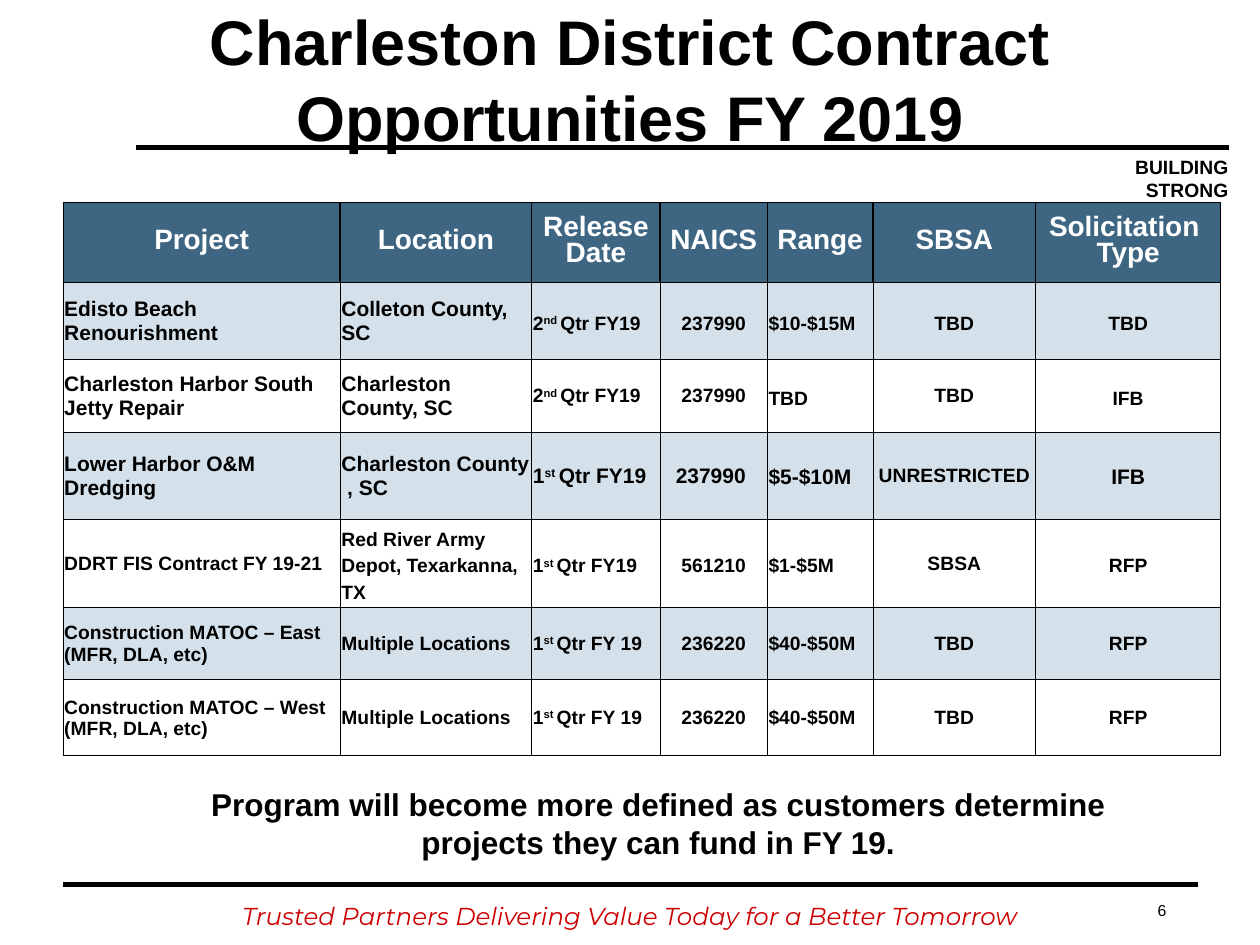
from dataclasses import dataclass
from typing import Optional

from lxml.etree import SubElement
from pptx import Presentation
from pptx.dml.color import RGBColor
from pptx.enum.shapes import MSO_CONNECTOR
from pptx.enum.text import MSO_ANCHOR, MSO_AUTO_SIZE, PP_ALIGN
from pptx.oxml.ns import qn
from pptx.util import Emu, Pt

EMU_PER_PX = 9144  # 100 px to the inch


@dataclass(frozen=True)
class Theme:
    font: str = "Arial"
    motto_font: str = "Montserrat"
    black: str = "000000"
    white: str = "FFFFFF"
    motto: str = "CC0000"
    header: str = "3E6682"
    band: str = "D4E1EA"
    title_size: int = 36
    note_size: int = 18
    header_size: int = 16
    motto_size: int = 14
    large_size: int = 12
    small_size: int = 11
    number_size: int = 9
    rule_width: float = 3
    cell_line: float = 0.5
    header_line: float = 1
    row_leading: int = 15
    motto_leading: int = 16


THEME = Theme()
LEFT, CENTER, RIGHT = PP_ALIGN.LEFT, PP_ALIGN.CENTER, PP_ALIGN.RIGHT


@dataclass(frozen=True)
class Style:
    size: int
    color: str = THEME.black
    align: PP_ALIGN = LEFT
    leading: Optional[int] = None
    font: str = THEME.font
    bold: bool = True
    italic: bool = False


@dataclass(frozen=True)
class Label:
    text: str
    left: int
    top: int
    width: int
    height: int
    style: Style
    margin: int = 10
    title: bool = False


@dataclass(frozen=True)
class Rule:
    start: int
    end: int
    y: int


@dataclass(frozen=True)
class ProjectRow:
    """Carets enclose superscript; spaced lists columns with fixed leading."""
    height: int
    texts: tuple[str, ...]
    large: tuple[int, ...] = ()
    spaced: tuple[int, ...] = ()


RULES = [Rule(975, 108, 117), Rule(951, 50, 702)]
LABELS = [
    Label("BUILDING STRONG", 832, 123, 143, 19,
          Style(THEME.small_size, align=RIGHT), margin=0),
    Label("Trusted Partners Delivering Value Today for a Better Tomorrow", 0, 716, 1000, 22,
          Style(THEME.motto_size, THEME.motto, CENTER, THEME.motto_leading,
                THEME.motto_font, bold=False, italic=True), margin=0),
    Label("6", 909, 710, 40, 25, Style(THEME.number_size, bold=False)),
    Label("Program will become more defined as customers determine projects "
          "they can fund in FY 19.", 125, 618, 795, 71,
          Style(THEME.note_size, align=CENTER)),
    Label("Charleston District Contract Opportunities FY 2019", 50, 33, 900, 58,
          Style(THEME.title_size, align=CENTER), title=True),
]

TABLE_LEFT, TABLE_TOP = 50, 161
COLUMN_WIDTHS = (220, 152, 102, 85, 84, 129, 147)
COLUMN_ALIGNS = (LEFT, LEFT, LEFT, CENTER, LEFT, CENTER, CENTER)
HEADER_HEIGHT = 63
HEADERS = ("Project", "Location", "Release\nDate", "NAICS", "Range", "SBSA",
           "Solicitation \nType")
ROWS = [
    ProjectRow(61, ("Edisto Beach Renourishment", "Colleton County, SC", "2^nd ^Qtr FY19",
                    "237990", "$10-$15M", "TBD", "TBD"), (0, 1), (2, 3, 4, 5, 6)),
    ProjectRow(58, ("Charleston Harbor South Jetty Repair", "Charleston County, SC",
                    "2^nd ^Qtr FY19", "237990", "TBD", "TBD", "IFB"), (0, 1), (4, 6)),
    ProjectRow(69, ("Lower Harbor O&M Dredging", "Charleston County  , SC", "1^st ^Qtr FY19",
                    "237990 ", "$5-$10M", "UNRESTRICTED", "IFB"), (0, 1, 2, 3, 4, 6), (4, 6)),
    ProjectRow(70, ("DDRT FIS Contract FY 19-21", "Red River Army Depot, Texarkanna, TX",
                    "1^st ^Qtr FY19", "561210", "$1-$5M", "SBSA", "RFP"),
               spaced=(1, 2, 3, 4, 6)),
    ProjectRow(57, ("Construction MATOC – East (MFR, DLA, etc)", "Multiple Locations",
                    "1^st ^Qtr FY 19", "236220", "$40-$50M", "TBD", "RFP")),
    ProjectRow(61, ("Construction MATOC – West (MFR, DLA, etc)", "Multiple Locations",
                    "1^st ^Qtr FY 19", "236220", "$40-$50M", "TBD", "RFP")),
]


def px(length: int) -> Emu:
    return Emu(length * EMU_PER_PX)


def write_text(frame, text: str, style: Style) -> None:
    for index, line in enumerate(text.split("\n")):
        para = frame.add_paragraph() if index else frame.paragraphs[0]
        para.alignment = style.align
        if style.leading:
            para.line_spacing = Pt(style.leading)
        for part, words in enumerate(line.split("^")):
            span = para.add_run()
            span.text = words
            span.font.name = style.font
            span.font.size = Pt(style.size)
            span.font.bold = style.bold
            span.font.italic = style.italic
            span.font.color.rgb = RGBColor.from_string(style.color)
            if part % 2:
                span.font._element.set("baseline", "30000")


def draw_label(page, label: Label) -> None:
    box = page.shapes.add_textbox(px(label.left), px(label.top), px(label.width), px(label.height))
    frame = box.text_frame
    frame.word_wrap = True
    frame.auto_size = MSO_AUTO_SIZE.NONE if label.title else MSO_AUTO_SIZE.SHAPE_TO_FIT_TEXT
    frame.vertical_anchor = MSO_ANCHOR.MIDDLE if label.title else MSO_ANCHOR.TOP
    frame.margin_left = frame.margin_right = px(label.margin)
    frame.margin_top = frame.margin_bottom = px(label.margin // 2)
    write_text(frame, label.text, label.style)


def draw_rule(page, rule: Rule) -> None:
    line = page.shapes.add_connector(MSO_CONNECTOR.STRAIGHT, px(rule.start), px(rule.y),
                                     px(rule.end), px(rule.y))
    line.line.color.rgb = RGBColor.from_string(THEME.black)
    line.line.width = Pt(THEME.rule_width)
    SubElement(line._element.spPr, qn("a:effectLst"))


def set_borders(cell, left: float, right: float) -> None:
    widths = {"lnL": left, "lnR": right, "lnT": THEME.cell_line, "lnB": THEME.cell_line}
    for side, width in widths.items():
        border = SubElement(cell._tc.get_or_add_tcPr(), qn(f"a:{side}"), w=str(Pt(width)))
        fill = SubElement(border, qn("a:solidFill"))
        SubElement(fill, qn("a:srgbClr"), val=THEME.black)


def fill_cell(cell, text: str, style: Style, fill: str, margin: int, bottom: int) -> None:
    cell.vertical_anchor = MSO_ANCHOR.MIDDLE
    cell.margin_left = cell.margin_right = cell.margin_top = px(margin)
    cell.margin_bottom = px(bottom)
    cell.fill.solid()
    cell.fill.fore_color.rgb = RGBColor.from_string(fill)
    write_text(cell.text_frame, text, style)


def draw_table(page) -> None:
    heights = [HEADER_HEIGHT] + [row.height for row in ROWS]
    table = page.shapes.add_table(len(heights), len(COLUMN_WIDTHS), px(TABLE_LEFT), px(TABLE_TOP),
                                  px(sum(COLUMN_WIDTHS)), px(sum(heights))).table
    table.first_row = table.horz_banding = False
    for column, width in zip(table.columns, COLUMN_WIDTHS):
        column.width = px(width)
    for line, height in zip(table.rows, heights):
        line.height = px(height)

    # Header row, with heavier lines between its columns
    header_style = Style(THEME.header_size, THEME.white, CENTER, THEME.row_leading)
    last = len(HEADERS) - 1
    for col, text in enumerate(HEADERS):
        cell = table.cell(0, col)
        set_borders(cell, THEME.header_line if col else THEME.cell_line,
                    THEME.header_line if col < last else THEME.cell_line)
        fill_cell(cell, text, header_style, THEME.header, 7, 7)

    # Project rows, banded
    for number, row in enumerate(ROWS, start=1):
        for col, text in enumerate(row.texts):
            cell = table.cell(number, col)
            style = Style(THEME.large_size if col in row.large else THEME.small_size,
                          align=COLUMN_ALIGNS[col],
                          leading=THEME.row_leading if col in row.spaced else None)
            set_borders(cell, THEME.cell_line, THEME.cell_line)
            fill_cell(cell, text, style, THEME.band if number % 2 else THEME.white, 1, 0)


def main() -> None:
    deck = Presentation()
    deck.slide_width, deck.slide_height = px(1000), px(750)
    page = deck.slides.add_slide(deck.slide_layouts[6])
    for rule in RULES:
        draw_rule(page, rule)
    draw_table(page)
    for label in LABELS:
        draw_label(page, label)
    deck.save("out.pptx")


if __name__ == "__main__":
    main()
